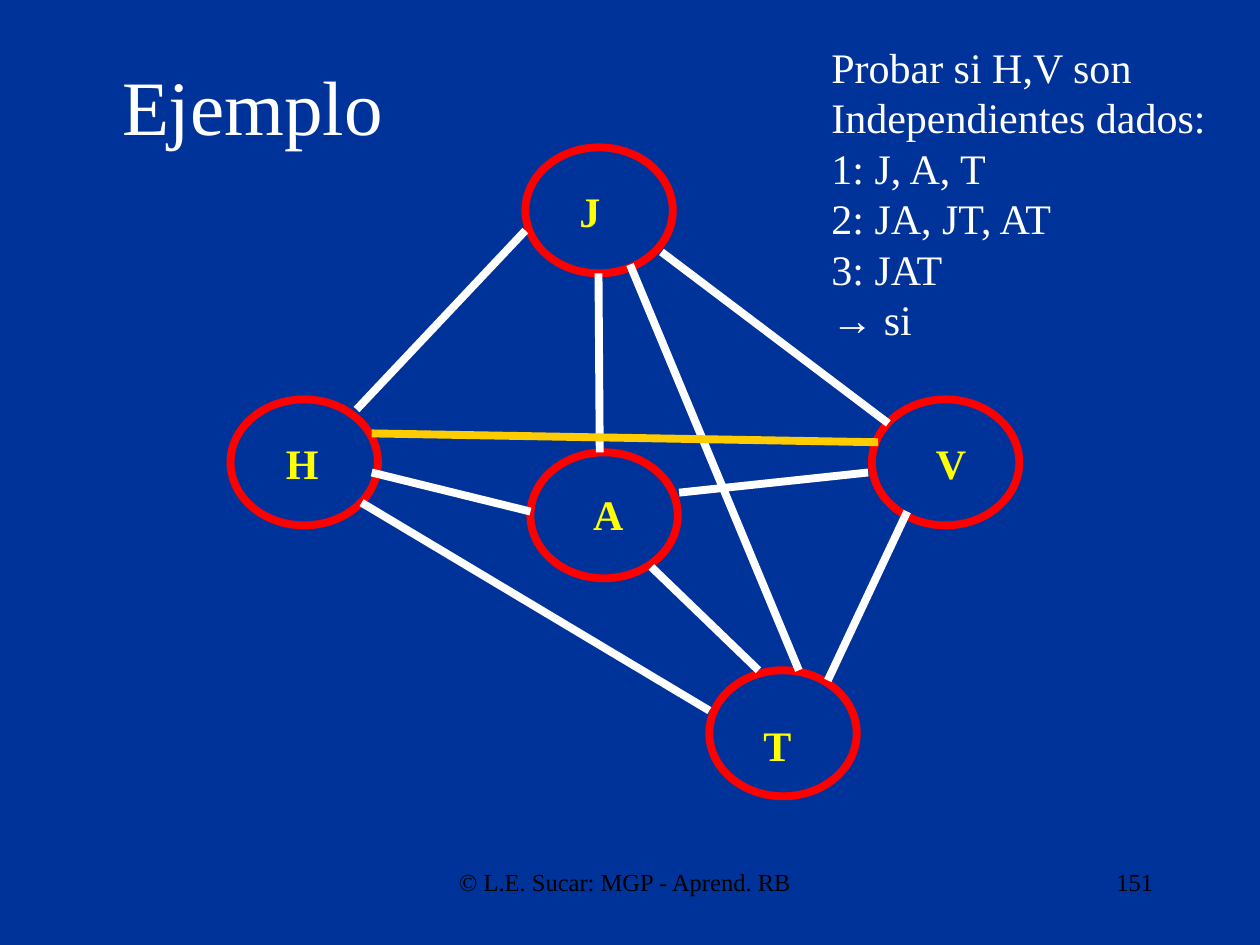
from dataclasses import dataclass

import pptx
import pptx.util
import pptx.dml.color
import pptx.enum.shapes
import pptx.enum.text
import pptx.oxml
import pptx.oxml.ns

Inches = pptx.util.Inches
Pt = pptx.util.Pt
RGBColor = pptx.dml.color.RGBColor
Align = pptx.enum.text.PP_ALIGN
Anchor = pptx.enum.text.MSO_ANCHOR

BLUE = RGBColor(0x00, 0x33, 0x99)
WHITE = RGBColor(0xFF, 0xFF, 0xFF)
BLACK = RGBColor(0x00, 0x00, 0x00)
RED = RGBColor(0xFF, 0x00, 0x00)
YELLOW = RGBColor(0xFF, 0xFF, 0x00)
GOLD = RGBColor(0xFF, 0xCC, 0x00)

FONT = "Times New Roman"
STROKE = Pt(4.5)
NODE_WIDTH, NODE_HEIGHT = 1.17, 1.0


@dataclass
class Node:
    label: str
    left: float
    top: float
    label_left: float
    label_top: float
    label_width: float


@dataclass
class Edge:
    start: tuple[float, float]
    end: tuple[float, float]
    color: RGBColor = WHITE


NODES = [
    Node("A", 4.21, 3.59, 4.61, 3.83, 0.44),
    Node("J", 4.17, 1.17, 4.5, 1.42, 0.37),
    Node("H", 1.83, 3.17, 2.17, 3.42, 0.46),
    Node("V", 6.92, 3.17, 7.33, 3.42, 0.44),
    Node("T", 5.63, 5.32, 5.96, 5.66, 0.42),
]

EDGES = [
    Edge((4.75, 2.17), (4.76, 3.59)),  # J-A
    Edge((5.17, 4.5), (6.02, 5.32)),  # A-T
    Edge((4.17, 1.83), (2.83, 3.25)),  # J-H
    Edge((5.25, 2), (7.05, 3.36)),  # J-V
    Edge((4.21, 4.06), (2.95, 3.75)),  # A-H
    Edge((5.63, 5.64), (2.87, 3.99)),  # T-H
    Edge((5, 2.1), (6.34, 5.32)),  # J-T
    Edge((5.39, 3.91), (6.89, 3.75)),  # A-V
    Edge((6.57, 5.4), (7.2, 4.06)),  # T-V
    Edge((6.97, 3.51), (2.95, 3.44), GOLD),  # V-H, the edge under test
]

TESTS = """Probar si H,V son
Independientes dados:
1: J, A, T
2: JA, JT, AT
3: JAT
→ si"""


def write(frame, text: str, size: float, color: RGBColor,
          align=Align.LEFT, bold: bool = False) -> None:
    frame.text = text
    for para in frame.paragraphs:
        para.alignment = align
        for span in para.runs:
            span.font.name = FONT
            span.font.size = Pt(size)
            span.font.bold = bold
            span.font.color.rgb = color


def add_text(page, left: float, top: float, width: float, height: float,
             text: str, size: float, color: RGBColor, align=Align.LEFT,
             bold: bool = False, wrap: bool = False) -> None:
    box = page.shapes.add_textbox(
        Inches(left), Inches(top), Inches(width), Inches(height))
    write(box.text_frame, text, size, color, align, bold)
    box.text_frame.word_wrap = wrap
    if not wrap:
        box.text_frame.auto_size = pptx.enum.text.MSO_AUTO_SIZE.SHAPE_TO_FIT_TEXT


def add_node(page, node: Node) -> None:
    oval = page.shapes.add_shape(
        pptx.enum.shapes.MSO_SHAPE.OVAL, Inches(node.left), Inches(node.top),
        Inches(NODE_WIDTH), Inches(NODE_HEIGHT))
    oval.shadow.inherit = False
    oval.fill.background()
    oval.line.color.rgb = RED
    oval.line.width = STROKE
    add_text(page, node.label_left, node.label_top, node.label_width, 0.5,
             node.label, 24, YELLOW, bold=True)


def add_edge(page, edge: Edge) -> None:
    line = page.shapes.add_connector(
        pptx.enum.shapes.MSO_CONNECTOR.STRAIGHT,
        *(Inches(value) for value in edge.start + edge.end))
    line.line.color.rgb = edge.color
    line.line.width = STROKE
    properties = line.element.spPr
    properties.append(pptx.oxml.parse_xml(
        f"<a:effectLst {pptx.oxml.ns.nsdecls('a')}/>"))


def main() -> None:
    deck = pptx.Presentation()
    deck.slide_width, deck.slide_height = Inches(10), Inches(7.5)
    page = deck.slides.add_slide(deck.slide_layouts[5])
    page.background.fill.solid()
    page.background.fill.fore_color.rgb = BLUE

    # Title
    title = page.shapes.title
    title.left, title.top = Inches(0.35), Inches(0.21)
    title.width, title.height = Inches(3.31), Inches(1.25)
    write(title.text_frame, "Ejemplo", 44, WHITE, Align.CENTER)
    title.text_frame.vertical_anchor = Anchor.MIDDLE

    # Graph
    for node in NODES:
        add_node(page, node)
    for edge in EDGES:
        add_edge(page, edge)

    # Independence tests
    add_text(page, 6.5, 0.28, 3.17, 2.5, TESTS, 24, WHITE)

    # Footer and page number
    add_text(page, 3, 6.83, 3.92, 0.5, "© L.E. Sucar: MGP - Aprend. RB",
             14, BLACK, Align.CENTER, wrap=True)
    add_text(page, 7.17, 6.83, 2.08, 0.5, "151", 14, BLACK, Align.RIGHT, wrap=True)

    deck.save("out.pptx")


if __name__ == "__main__":
    main()
